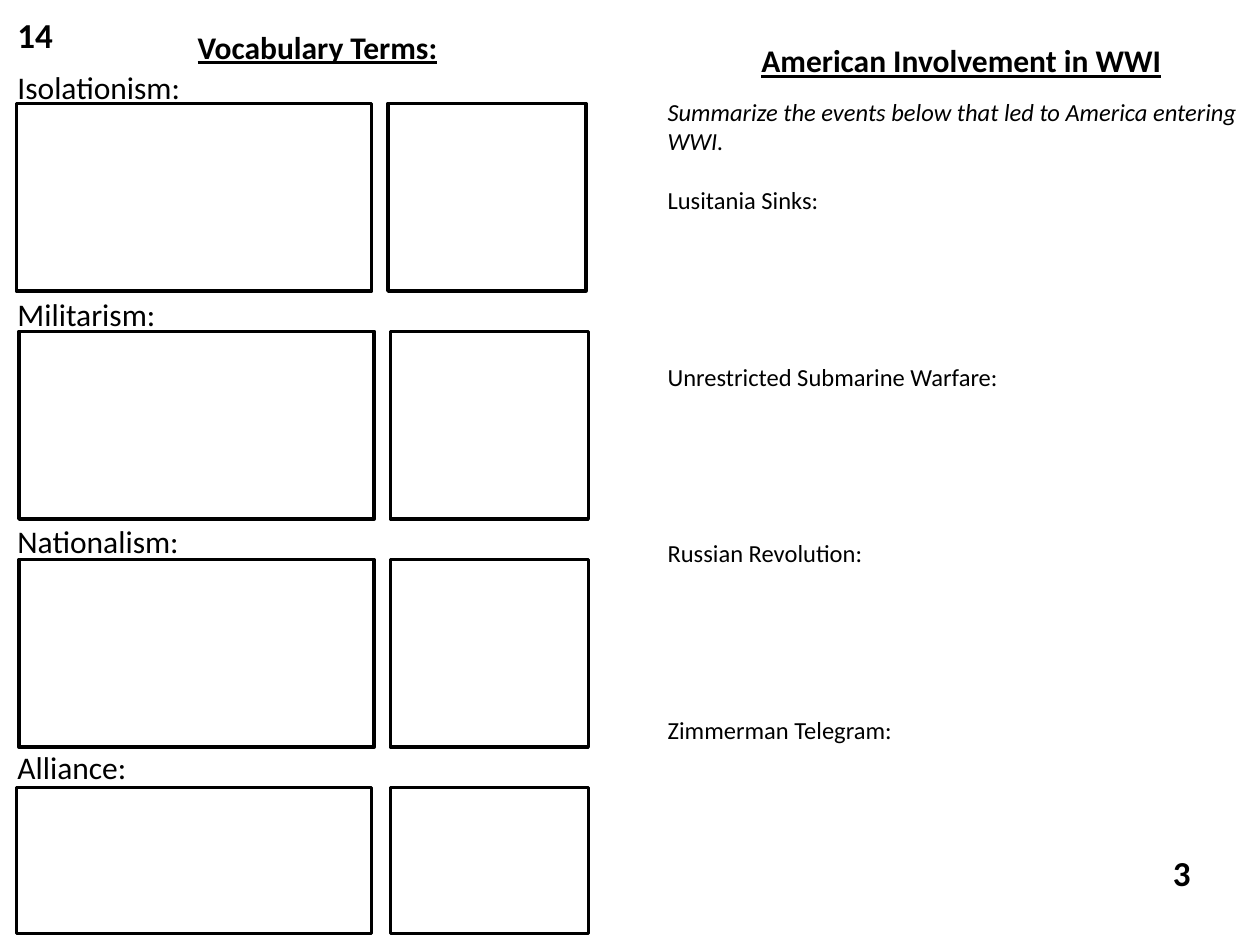
from pptx import Presentation
from pptx.dml.color import RGBColor
from pptx.enum.shapes import MSO_SHAPE
from pptx.enum.text import PP_ALIGN
from pptx.util import Inches, Pt

THEME = {
    "font": "Calibri",
    "ink": RGBColor(0, 0, 0),
    "title": 18,
    "page_number": 20,
    "term": 18,
    "event": 14,
    "outline": 2,
}

# text, (left, top, width, height)
TITLES = [
    ("Vocabulary Terms:", (0.31, 0.17, 4.42, 0.42)),
    ("American Involvement in WWI", (5.42, 0.28, 4.42, 0.47)),
]
PAGE_NUMBERS = [
    ("14", (0.04, 0.06, 0.54, 0.44)),
    ("3", (9.21, 6.71, 0.58, 0.44)),
]
TERMS = ["Isolationism:", "Militarism:", "Nationalism:", "Alliance:"]
TERMS_AREA = (0.04, 0.49, 3.52, 7.37)
TERM_GAP = 108  # points of writing room between terms

INSTRUCTION = "Summarize the events below that led to America entering WWI."
EVENTS = [
    "Lusitania Sinks:",
    "Unrestricted Submarine Warfare:",
    "Russian Revolution:",
    "Zimmerman Telegram:",
]
EVENTS_AREA = (5.2, 0.72, 4.84, 6.53)
FIRST_EVENT_GAP, EVENT_GAP = 17, 84

BOX_TOP, BOX_PITCH = 0.82, 1.81
BOX_HEIGHTS = [1.49, 1.49, 1.49, 1.16]
# width, left edge in each row
BOX_COLUMNS = [
    (2.82, [0.13, 0.15, 0.15, 0.13]),
    (1.57, [3.08, 3.1, 3.1, 3.1]),
]


def add_text(slide, area, lines, size, gaps=None, align=PP_ALIGN.LEFT):
    """Add one paragraph per line; gaps are the points of space before each."""
    frame = slide.shapes.add_textbox(*map(Inches, area)).text_frame
    frame.word_wrap = True
    frame.text = "\n".join(lines)
    for paragraph, gap in zip(frame.paragraphs, gaps or [0] * len(lines)):
        paragraph.alignment = align
        paragraph.space_before = Pt(gap)
        paragraph.font.name = THEME["font"]
        paragraph.font.size = Pt(size)
        paragraph.font.color.rgb = THEME["ink"]
    return frame.paragraphs


def add_box(slide, left, top, width, height):
    box = slide.shapes.add_shape(
        MSO_SHAPE.RECTANGLE, *map(Inches, (left, top, width, height)))
    box.shadow.inherit = False
    box.fill.background()
    box.line.color.rgb = THEME["ink"]
    box.line.width = Pt(THEME["outline"])


def main():
    presentation = Presentation()
    presentation.slide_width, presentation.slide_height = Inches(10), Inches(7.5)
    slide = presentation.slides.add_slide(presentation.slide_layouts[6])

    for text, area in TITLES:
        title = add_text(slide, area, [text], THEME["title"],
                         align=PP_ALIGN.CENTER)[0]
        title.font.bold = True
        title.font.underline = True

    for text, area in PAGE_NUMBERS:
        number = add_text(slide, area, [text], THEME["page_number"])[0]
        number.font.bold = True

    event_gaps = [0, FIRST_EVENT_GAP] + [EVENT_GAP] * (len(EVENTS) - 1)
    instruction = add_text(slide, EVENTS_AREA, [INSTRUCTION] + EVENTS,
                           THEME["event"], event_gaps)[0]
    instruction.font.italic = True

    term_gaps = [0] + [TERM_GAP] * (len(TERMS) - 1)
    add_text(slide, TERMS_AREA, TERMS, THEME["term"], term_gaps)

    for width, lefts in BOX_COLUMNS:
        for row, (left, height) in enumerate(zip(lefts, BOX_HEIGHTS)):
            add_box(slide, left, BOX_TOP + row * BOX_PITCH, width, height)

    presentation.save("out.pptx")


if __name__ == "__main__":
    main()
